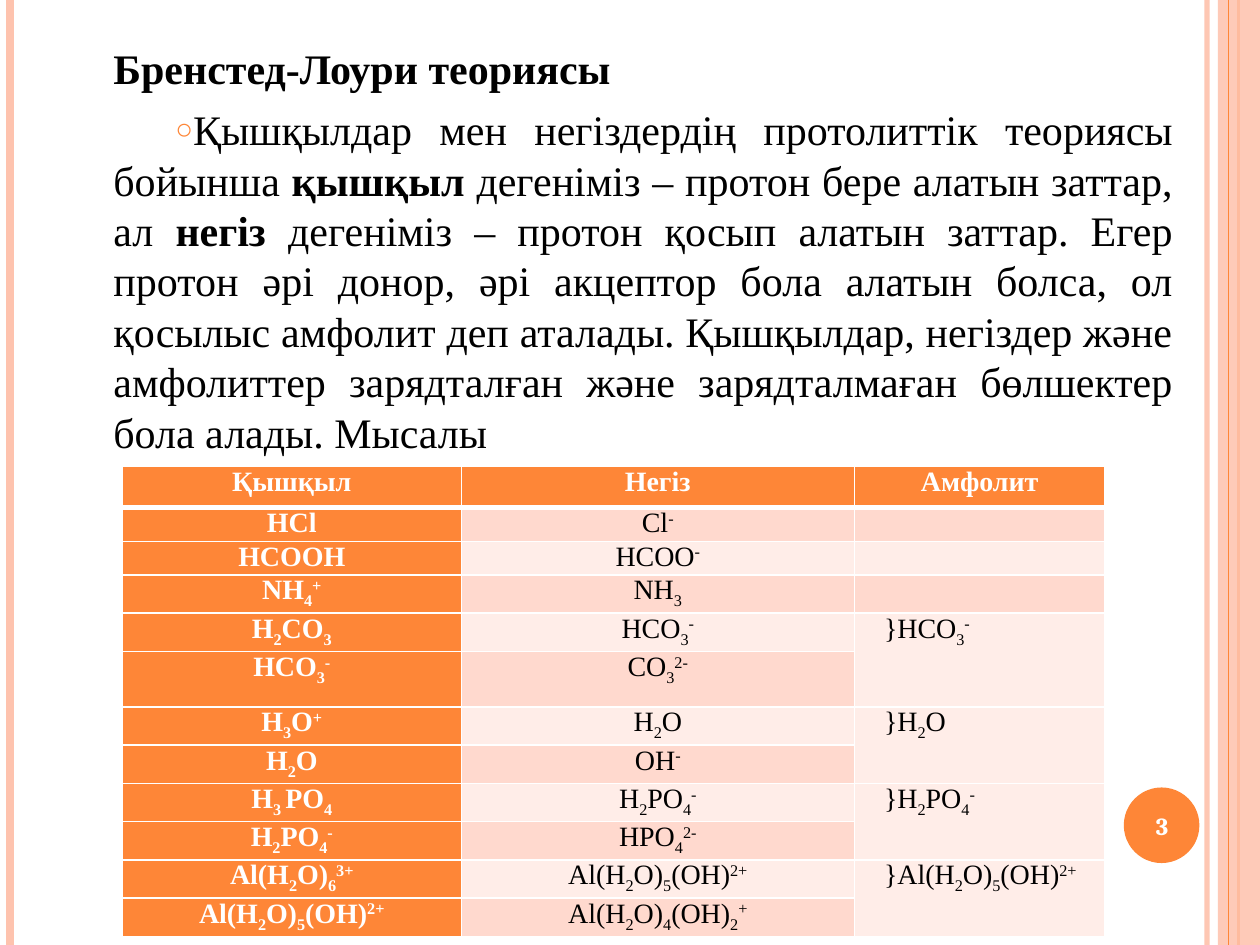
from dataclasses import dataclass

from lxml import etree
from pptx import Presentation
from pptx.dml.color import RGBColor
from pptx.enum.shapes import MSO_CONNECTOR, MSO_SHAPE
from pptx.enum.text import MSO_ANCHOR, MSO_AUTO_SIZE, PP_ALIGN
from pptx.oxml.ns import qn
from pptx.util import Pt

STRAIGHT = MSO_CONNECTOR.STRAIGHT
RECT, OVAL = MSO_SHAPE.RECTANGLE, MSO_SHAPE.OVAL
CENTER, LEFT, JUSTIFY = PP_ALIGN.CENTER, PP_ALIGN.LEFT, PP_ALIGN.JUSTIFY
MIDDLE, TOP = MSO_ANCHOR.MIDDLE, MSO_ANCHOR.TOP
NO_AUTOFIT = MSO_AUTO_SIZE.NONE


@dataclass(frozen=True)
class Theme:
    """Colours, fonts and type sizes of the slide."""
    orange: str = "FE8637"
    peach: str = "FEC3AE"
    band_dark: str = "FFD9CE"
    band_light: str = "FFEDE8"
    white: str = "FFFFFF"
    black: str = "000000"
    font: str = "Times New Roman"
    number_font: str = "Cambria"
    body: int = 24
    cell: int = 16
    number: int = 14


T = Theme()
WIDTH, HEIGHT = 720, 540

RAILS = [(689.76, T.peach, 3, 93), (5.76, T.peach, 4.5, 100), (707.76, T.orange, 1.5, 100)]

THEORY = [
    ("Қышқылдар мен негіздердің протолиттік теориясы бойынша", False),
    (" қышқыл ", True),
    ("дегеніміз – протон бере алатын заттар, ал ", False),
    ("негіз ", True),
    ("дегеніміз – протон қосып алатын заттар. Егер протон әрі донор, әрі акцептор бола "
     "алатын болса, ол қосылыс амфолит деп аталады. Қышқылдар, негіздер және амфолиттер "
     "зарядталған және зарядталмаған бөлшектер бола алады. Мысалы", False),
]

HEADER = ["Қышқыл", "Негіз", "Амфолит"]
PAIRS = [
    ("HCl", "Cl|^-", ""),
    ("HCOOH", "HCOO|^-", ""),
    ("NH|_4|^+", "NH|_3", ""),
    ("H|_2|CO|_3", "HCO|_3|^-", "}HCO|_3|^-"),
    ("HCO|_3|^-", "CO|_3|^2-", ""),
    ("H|_3|O|^+", "H|_2|O", "}H|_2|O"),
    ("H|_2|O", "OH|^-", ""),
    ("H|_3 |PO|_4", "H|_2|PO|_4|^-", "}H|_2|PO|_4|^-"),
    ("H|_2|PO|_4|^-", "HPO|_4|^2-", ""),
    ("Al(H|_2|O)|_6|^3+", "Al(H|_2|O)|_5|(OH)|^2+", "}Al(H|_2|O)|_5|(OH)|^2+"),
    ("Al(H|_2|O)|_5|(OH)|^2+", "Al(H|_2|O)|_4|(OH)|_2|^+", ""),
]
COL_WIDTHS = [193.7, 224.6, 143.3]
ROW_HEIGHTS = [23.5] + [17.7] * 2 + [20.25] * 2 + [31.7] + [20.25] * 6
SHIFTS = {"_": "-25000", "^": "30000"}


def rgb(color):
    """Turn a hex string into a colour."""
    return RGBColor.from_string(color)


def add_run(p, text, size, color, bold=False, font=T.font):
    """Append one formatted run."""
    r = p.add_run()
    r.text = text
    r.font.name, r.font.size, r.font.bold = font, Pt(size), bold
    r.font.color.rgb = rgb(color)
    return r


def add_formula(p, formula, color, bold):
    """Append a formula whose _ parts are subscripts and ^ parts superscripts."""
    for part in formula.split("|"):
        shift = SHIFTS.get(part[0])
        r = add_run(p, part[1:] if shift else part, T.cell, color, bold)
        if shift:
            r.font._element.set("baseline", shift)


def set_alpha(fill_parent, percent):
    """Make the solid fill below an element translucent."""
    color = next(fill_parent.iter(qn("a:srgbClr")))
    etree.SubElement(color, qn("a:alpha")).set("val", str(percent * 1000))


def add_rail(s, x, color, width, alpha=100):
    """Draw a vertical line over the full slide height."""
    line = s.shapes.add_connector(STRAIGHT, Pt(x), Pt(0), Pt(x), Pt(HEIGHT))
    line.line.color.rgb, line.line.width = rgb(color), Pt(width)
    sp_pr = line._element.spPr
    etree.SubElement(sp_pr, qn("a:effectLst"))
    if alpha < 100:
        set_alpha(sp_pr, alpha)


def add_block(s, kind, x, y, w, h, color):
    """Draw a filled shape without an outline."""
    sp = s.shapes.add_shape(kind, Pt(x), Pt(y), Pt(w), Pt(h))
    sp.shadow.inherit = False
    sp.fill.solid()
    sp.fill.fore_color.rgb = rgb(color)
    sp.line.fill.background()
    return sp


def add_number(s, text):
    """Write the slide number over its disc."""
    add_block(s, OVAL, 642.2, 450, 43.2, 43.2, T.orange)
    sp = s.shapes.add_textbox(Pt(640), Pt(451.4), Pt(48.2), Pt(41))
    tf = sp.text_frame
    tf.word_wrap, tf.vertical_anchor = True, MIDDLE
    p = tf.paragraphs[0]
    p.alignment = CENTER
    add_run(p, text, T.number, T.white, True, T.number_font)


def format_body(p, indent, bullet=None):
    """Justify a body paragraph and set its indent and bullet."""
    p.alignment, p.space_before = JUSTIFY, Pt(6)
    p_pr = p._p.get_or_add_pPr()
    p_pr.set("marL", str(Pt(21.6)))
    p_pr.set("indent", str(Pt(indent)))
    if not bullet:
        etree.SubElement(p_pr, qn("a:buNone"))
        return
    color = etree.SubElement(p_pr, qn("a:buClr"))
    etree.SubElement(color, qn("a:srgbClr")).set("val", T.orange)
    etree.SubElement(p_pr, qn("a:buSzPct")).set("val", "70000")
    etree.SubElement(p_pr, qn("a:buChar")).set("char", bullet)


def fill_body(s):
    """Write the heading and the theory into the body placeholder."""
    sp = s.placeholders[1]
    sp.left, sp.top, sp.width, sp.height = Pt(36), Pt(20.9), Pt(641.5), Pt(488.9)
    tf = sp.text_frame
    tf.word_wrap, tf.auto_size, tf.vertical_anchor = True, NO_AUTOFIT, TOP
    p = tf.paragraphs[0]
    format_body(p, 0)
    add_run(p, "Бренстед-Лоури теориясы", T.body, T.black, True)
    p = tf.add_paragraph()
    format_body(p, 35.4, "○")
    for text, bold in THEORY:
        add_run(p, text, T.body, T.black, bold)


def set_borders(cell, widths):
    """Give a cell white borders of the widths named by side."""
    tc_pr = cell._tc.get_or_add_tcPr()
    for side, width in widths.items():
        ln = etree.SubElement(tc_pr, qn(f"a:ln{side}"), w=str(Pt(width)))
        fill = etree.SubElement(ln, qn("a:solidFill"))
        etree.SubElement(fill, qn("a:srgbClr")).set("val", T.white)


def fill_cell(cell, formula, row, col):
    """Write and format a cell by its place in the table."""
    strong = row == 0 or col == 0
    band = T.band_dark if row % 2 else T.band_light
    cell.margin_left = cell.margin_right = Pt(5)
    cell.margin_top = cell.margin_bottom = 0
    set_borders(cell, {"L": 1, "R": 1, "T": 3 if row == 1 else 1, "B": 1 if row else 3})
    cell.fill.solid()
    cell.fill.fore_color.rgb = rgb(T.orange if strong else band)
    p = cell.text_frame.paragraphs[0]
    p.alignment = CENTER
    if col == 2 and row:
        p.alignment = LEFT
        p._p.get_or_add_pPr().set("marL", str(Pt(12)))
    if formula:
        add_formula(p, formula, T.white if strong else T.black, strong)
    else:
        etree.SubElement(p._p, qn("a:endParaRPr")).set("sz", str(T.cell * 75))


def add_pairs_table(s):
    """Add the table of acids, bases and ampholytes."""
    rows = [HEADER, *PAIRS]
    frame = s.shapes.add_table(len(rows), len(HEADER), Pt(69.9), Pt(266.6),
                               Pt(sum(COL_WIDTHS)), Pt(sum(ROW_HEIGHTS)))
    table = frame.table
    for column, width in zip(table.columns, COL_WIDTHS):
        column.width = Pt(width)
    for i, (row, height) in enumerate(zip(rows, ROW_HEIGHTS)):
        table.rows[i].height = Pt(height)
        for j, formula in enumerate(row):
            fill_cell(table.cell(i, j), formula, i, j)
    for i in range(4, len(rows), 2):
        table.cell(i, 2).merge(table.cell(i + 1, 2))


def main():
    """Build the slide."""
    prs = Presentation()
    prs.slide_width, prs.slide_height = Pt(WIDTH), Pt(HEIGHT)
    s = prs.slides.add_slide(prs.slide_layouts[1])
    title = s.shapes.title._element
    title.getparent().remove(title)
    for rail in RAILS:
        add_rail(s, *rail)
    band = add_block(s, RECT, 696, 0, 24, HEIGHT, T.peach)
    set_alpha(band._element.spPr, 87)
    add_rail(s, 702, T.orange, 0.75)
    fill_body(s)
    add_number(s, "3")
    add_pairs_table(s)
    prs.save("out.pptx")


if __name__ == "__main__":
    main()
